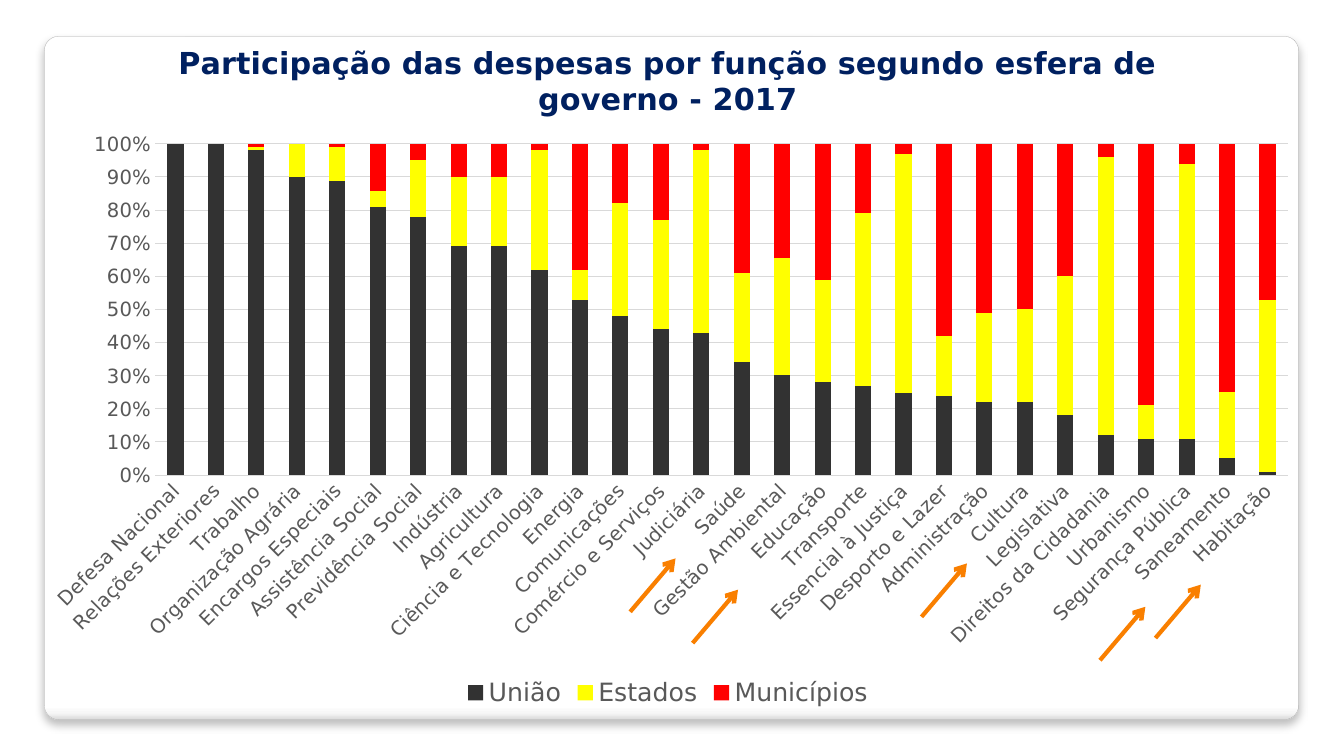
from dataclasses import dataclass

from lxml.etree import SubElement
from pptx import Presentation
from pptx.chart.data import CategoryChartData
from pptx.dml.color import RGBColor
from pptx.enum.chart import XL_CHART_TYPE, XL_LEGEND_POSITION, XL_TICK_MARK
from pptx.enum.shapes import MSO_CONNECTOR, MSO_SHAPE
from pptx.oxml import parse_xml
from pptx.oxml.ns import nsdecls, qn
from pptx.util import Inches, Pt

TITLE = "Participação das despesas por função segundo esfera de governo - 2017"
SPHERES = ("União", "Estados", "Municípios")
SHARES = [  # function, then the share of each sphere in percent
    ("Defesa Nacional", 100, 0, 0),
    ("Relações Exteriores", 100, 0, 0),
    ("Trabalho", 98, 1, 1),
    ("Organização Agrária", 89, 10, 0),
    ("Encargos Especiais", 88, 10, 1),
    ("Assistência Social", 80, 5, 14),
    ("Previdência Social", 78, 17, 5),
    ("Indústria", 69, 21, 10),
    ("Agricultura", 69, 21, 10),
    ("Ciência e Tecnologia", 62, 36, 2),
    ("Energia", 53, 9, 38),
    ("Comunicações", 48, 34, 18),
    ("Comércio e Serviços", 44, 33, 23),
    ("Judiciária", 43, 55, 2),
    ("Saúde", 34, 27, 39),
    ("Gestão Ambiental", 30, 35, 34),
    ("Educação", 28, 31, 41),
    ("Transporte", 27, 52, 21),
    ("Essencial à Justiça", 25, 73, 3),
    ("Desporto e Lazer", 24, 18, 58),
    ("Administração", 22, 27, 51),
    ("Cultura", 22, 28, 50),
    ("Legislativa", 18, 42, 40),
    ("Direitos da Cidadania", 12, 84, 4),
    ("Urbanismo", 11, 10, 79),
    ("Segurança Pública", 11, 83, 6),
    ("Saneamento", 5, 20, 75),
    ("Habitação", 1, 52, 47),
]
# Boxes are left, top, width, height in inches
PANEL_BOX = (0.44, 0.36, 12.44, 6.78)
CHART_BOX = (0.22, 0.18, 12.81, 6.89)
PLOT_SHARES = {"x": 0.103, "y": 0.181, "w": 0.877, "h": 0.477}
ARROW_TIPS = [(6.7, 5.54), (7.32, 5.85), (9.59, 5.59), (11.36, 6.02), (11.91, 5.8)]
ARROW_RUN, ARROW_RISE = 0.45, 0.53


@dataclass(frozen=True)
class Theme:
    font: str = "DejaVu Sans"
    title_size: float = 21.6
    legend_size: int = 18
    axis_size: int = 14
    title: str = "002060"
    text: str = "595959"
    grid: str = "D9D9D9"
    arrow: str = "F97F00"
    panel_line: str = "A4A4A4"
    panel_stops: tuple = ((0, "FFFFFF"), (98, "FFFFFF"), (99, "F7F7F7"), (100, "DADADA"))
    spheres: tuple = ("323232", "FFFF00", "FF0000")


THEME = Theme()


def rgb(color):
    return RGBColor.from_string(color)


def style_font(font, size, color, bold=False):
    font.name, font.size, font.bold = THEME.font, Pt(size), bold
    font.color.rgb = rgb(color)


def style_line(line, color, width):
    line.color.rgb = rgb(color)
    line.width = Pt(width)


def add_panel(slide):
    panel = slide.shapes.add_shape(MSO_SHAPE.ROUNDED_RECTANGLE, *map(Inches, PANEL_BOX))
    panel.adjustments[0] = 0.021
    style_line(panel.line, THEME.panel_line, 0.16)
    panel.fill.gradient()
    panel.fill.gradient_angle = 270
    properties = panel._element.spPr
    stops = properties.find(qn("a:gradFill")).find(qn("a:gsLst"))
    for stop in list(stops):
        stops.remove(stop)
    for position, color in THEME.panel_stops:
        stop = SubElement(stops, qn("a:gs"), pos=str(position * 1000))
        SubElement(stop, qn("a:srgbClr"), val=color)
    panel.shadow.inherit = False
    properties.find(qn("a:effectLst")).append(parse_xml(
        f'<a:outerShdw {nsdecls("a")} blurRad="{Pt(6)}" dist="{Pt(4)}" dir="5400000" '
        'rotWithShape="0"><a:srgbClr val="000000"><a:alpha val="25000"/></a:srgbClr>'
        '</a:outerShdw>'))


def fix_plot_area(chart):
    """Give the inner plot area a fixed place within the chart."""
    plot_area = chart._chartSpace.chart.plotArea
    for layout in plot_area.findall(qn("c:layout")):
        plot_area.remove(layout)
    modes = '<c:xMode val="edge"/><c:yMode val="edge"/>'
    places = "".join(f'<c:{key} val="{share}"/>' for key, share in PLOT_SHARES.items())
    plot_area.insert(0, parse_xml(
        f'<c:layout {nsdecls("c")}><c:manualLayout><c:layoutTarget val="inner"/>'
        f'{modes}{places}</c:manualLayout></c:layout>'))


def add_share_chart(slide):
    functions, *columns = zip(*SHARES)
    data = CategoryChartData(number_format="0")
    data.categories = functions
    for sphere, values in zip(SPHERES, columns):
        data.add_series(sphere, values)
    chart = slide.shapes.add_chart(
        XL_CHART_TYPE.COLUMN_STACKED_100, *map(Inches, CHART_BOX), data).chart
    style_font(chart.font, THEME.legend_size, THEME.text)

    chart.has_title = True
    title = chart.chart_title.text_frame
    title.text = TITLE
    style_font(title.paragraphs[0].runs[0].font, THEME.title_size, THEME.title, bold=True)
    chart.chart_title.include_in_layout = False

    chart.has_legend = True
    chart.legend.position = XL_LEGEND_POSITION.BOTTOM
    chart.legend.include_in_layout = False
    style_font(chart.legend.font, THEME.legend_size, THEME.text)

    plot = chart.plots[0]
    plot.gap_width, plot.overlap, plot.vary_by_categories = 150, 100, False
    for series, color in zip(plot.series, THEME.spheres):
        series.format.fill.solid()
        series.format.fill.fore_color.rgb = rgb(color)

    categories, percent = chart.category_axis, chart.value_axis
    for axis in (categories, percent):
        axis.major_tick_mark = axis.minor_tick_mark = XL_TICK_MARK.NONE
        style_font(axis.tick_labels.font, THEME.axis_size, THEME.text)
    style_line(categories.format.line, THEME.grid, 0.75)
    label_body = categories._element.find(qn("c:txPr")).find(qn("a:bodyPr"))
    label_body.set("rot", str(-45 * 60000))
    percent.format.line.fill.background()
    percent.minimum_scale, percent.maximum_scale, percent.major_unit = 0, 1, 0.1
    style_line(percent.major_gridlines.format.line, THEME.grid, 0.75)
    percent.tick_labels.number_format = "0%"
    percent.tick_labels.number_format_is_linked = False
    fix_plot_area(chart)


def add_arrow(slide, tip_x, tip_y):
    ends = (tip_x - ARROW_RUN, tip_y + ARROW_RISE, tip_x, tip_y)
    arrow = slide.shapes.add_connector(MSO_CONNECTOR.STRAIGHT, *map(Inches, ends))
    style_line(arrow.line, THEME.arrow, 3)
    properties = arrow._element.spPr
    SubElement(properties.find(qn("a:ln")), qn("a:tailEnd"), type="arrow")
    SubElement(properties, qn("a:effectLst"))


def main():
    presentation = Presentation()
    presentation.slide_width, presentation.slide_height = Inches(13.33), Inches(7.5)
    slide = presentation.slides.add_slide(presentation.slide_layouts[6])
    add_panel(slide)
    add_share_chart(slide)
    for tip in ARROW_TIPS:
        add_arrow(slide, *tip)
    presentation.save("out.pptx")


if __name__ == "__main__":
    main()
